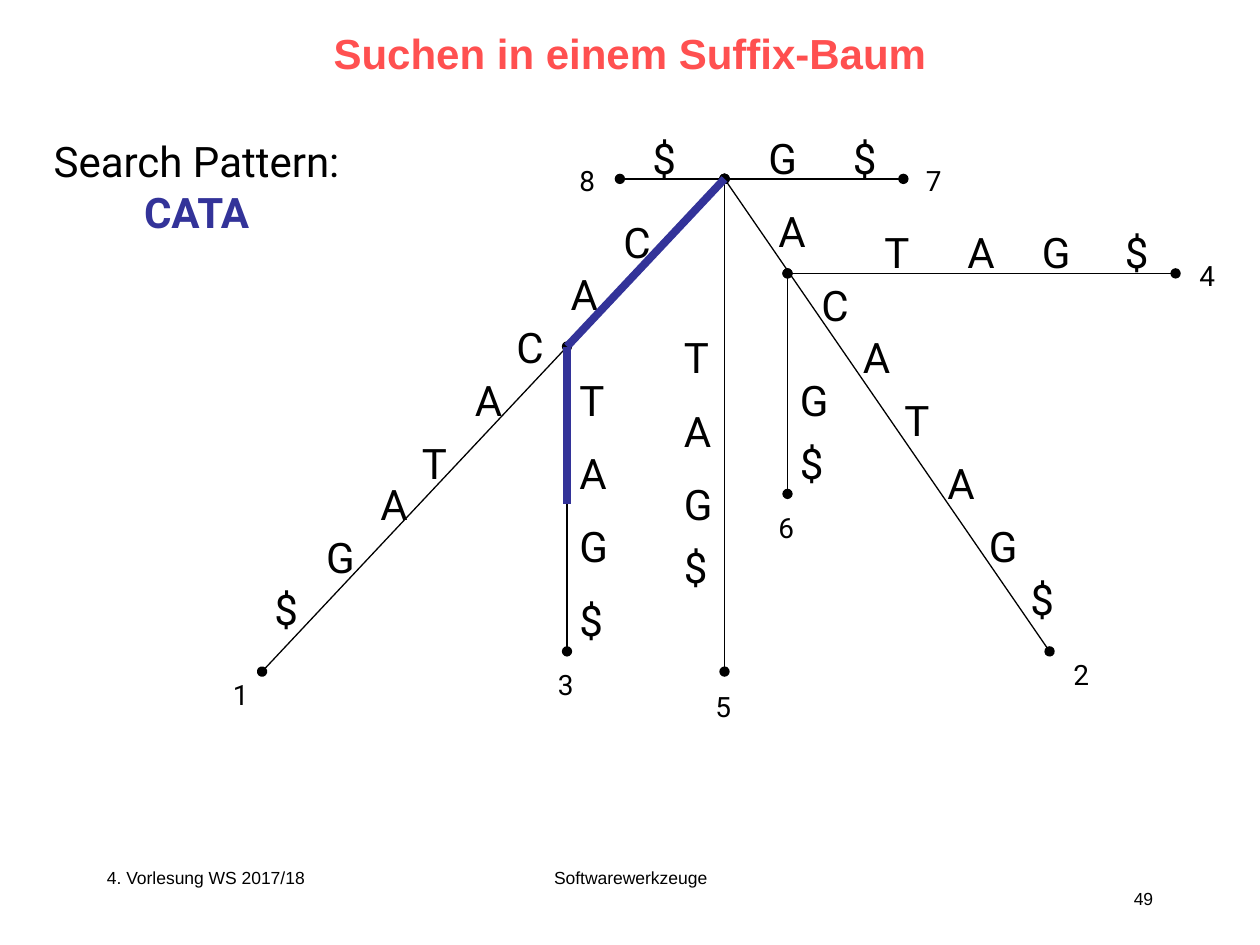
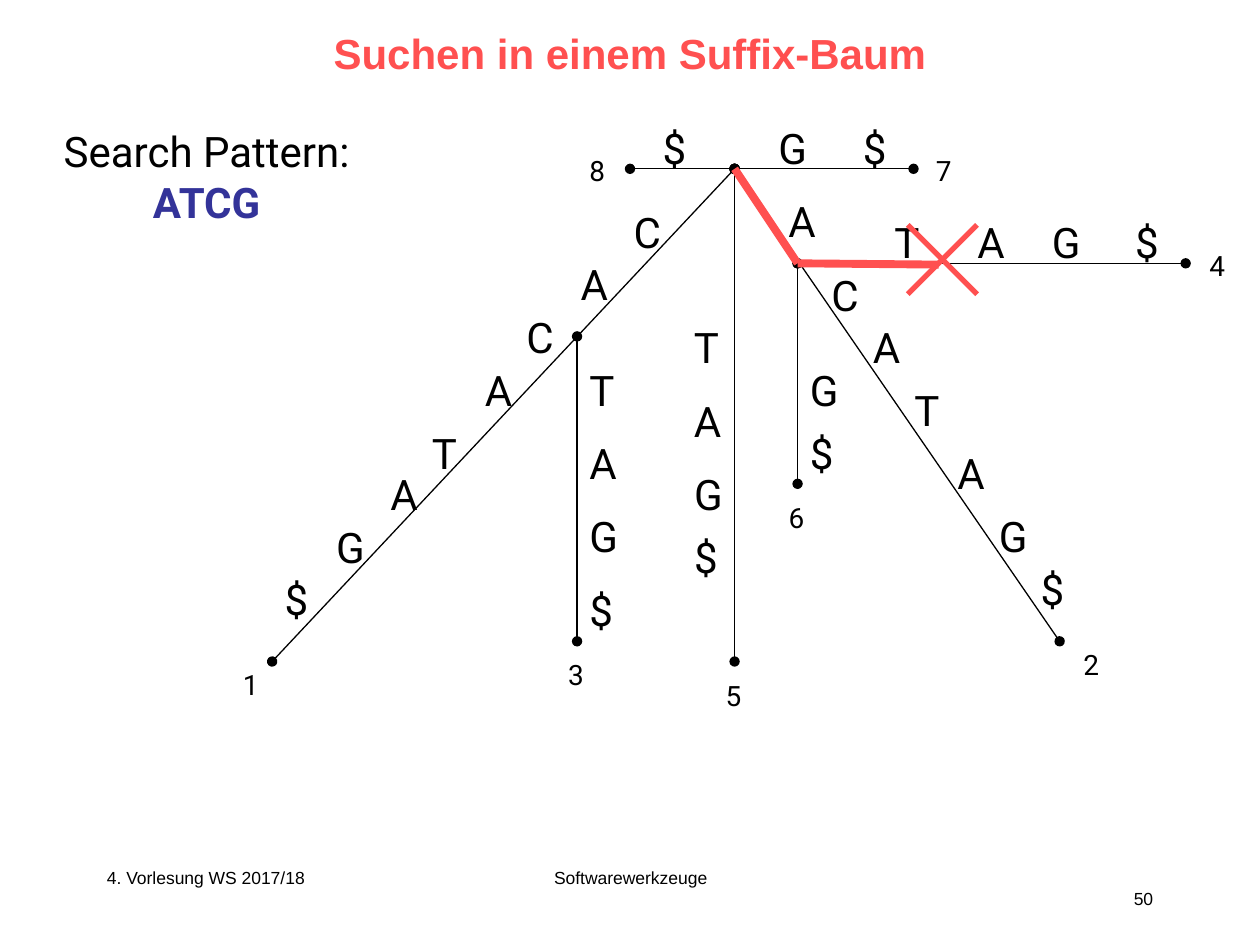
from lxml.etree import SubElement
from pptx import Presentation
from pptx.dml.color import RGBColor
from pptx.enum.shapes import MSO_CONNECTOR
from pptx.enum.text import MSO_ANCHOR, MSO_AUTO_SIZE, PP_ALIGN
from pptx.oxml.ns import qn
from pptx.util import Inches, Pt

COLORS = {"ink": "000000", "red": "FF5050", "blue": "333399"}
WIDTHS = {"G": 0.42, "$": 0.38}
NODES = {
    "root": (5.75, 1.42), "CA": (4.5, 2.75), "A": (6.25, 2.17),
    1: (2.08, 5.33), 2: (8.33, 5.17), 3: (4.5, 5.17), 4: (9.33, 2.17),
    5: (5.75, 5.33), 6: (6.25, 3.92), 7: (7.17, 1.42), 8: (4.92, 1.42),
}
EDGES = [("root", 1), ("root", 2), ("root", 5), ("CA", 3),
         ("A", 4), ("A", 6), ("root", 7), ("root", 8)]
LEAVES = {
    1: (1.75, 5.33), 2: (8.42, 5.17), 3: (4.33, 5.25), 4: (9.42, 2),
    5: (5.58, 5.42), 6: (6.08, 4), 7: (7.25, 1.25), 8: (4.5, 1.25),
}
LABELS = [
    ("CA", [4.85, 4.43], [1.67, 2.08]),
    ("CATAG$", [4, 3.67, 3.25, 2.92, 2.49, 2.08],
     [2.5, 2.92, 3.42, 3.75, 4.17, 4.58]),
    ("TAG$", [4.5] * 4, [2.92, 3.5, 4.08, 4.67]),
    ("TAG$", [5.33] * 4, [2.58, 3.17, 3.75, 4.25]),
    ("A", [6.08], [1.58]),
    ("CATAG$", [6.42, 6.75, 7.08, 7.42, 7.75, 8.08],
     [2.17, 2.58, 3.08, 3.58, 4.08, 4.5]),
    ("TAG$", [6.92, 7.58, 8.17, 8.83], [1.75] * 4),
    ("G$", [6.25] * 2, [2.92, 3.42]),
    ("G$", [6, 6.67], [1] * 2),
    ("$", [5.08], [1]),
]


class Deck:
    def __init__(self):
        self.prs = Presentation()
        self.prs.slide_width, self.prs.slide_height = Inches(10), Inches(7.5)
        self.slide = None
        self.shift = 0

    def style(self, para, size, font, color="ink", bold=False, align=PP_ALIGN.LEFT):
        para.alignment = align
        para.font.size, para.font.name, para.font.bold = Pt(size), font, bold
        para.font.color.rgb = RGBColor.from_string(COLORS[color])

    def place(self, x, y):
        return Inches(x + self.shift), Inches(y - self.shift)

    def start(self, title, number):
        self.shift = 0
        self.slide = self.prs.slides.add_slide(self.prs.slide_layouts[5])
        head = self.slide.shapes.title
        head.left, head.top = Inches(0.75), Inches(0.17)
        head.width, head.height = Inches(8.5), Inches(0.5)
        frame = head.text_frame
        frame.text = title
        frame.auto_size = MSO_AUTO_SIZE.NONE
        frame.vertical_anchor = MSO_ANCHOR.MIDDLE
        self.style(frame.paragraphs[0], 24, "Arial", "red", True, PP_ALIGN.CENTER)
        self.footer("4. Vorlesung WS 2017/18", 0.75, 6.83, 2.08, PP_ALIGN.LEFT)
        self.footer("Softwarewerkzeuge", 3.42, 6.83, 3.17, PP_ALIGN.CENTER)
        self.footer(str(number), 7.17, 7, 2.08, PP_ALIGN.RIGHT)

    def box(self, text, x, y, width, height):
        shape = self.slide.shapes.add_textbox(
            *self.place(x, y), Inches(width), Inches(height))
        shape.text_frame.text = text
        return shape.text_frame

    def footer(self, text, x, y, width, align):
        frame = self.box(text, x, y, width, 0.33)
        frame.word_wrap = True
        self.style(frame.paragraphs[0], 10, "Arial", align=align)

    def label(self, text, x, y, width, height, size):
        frame = self.box(text, x, y, width, height)
        frame.word_wrap = False
        frame.auto_size = MSO_AUTO_SIZE.SHAPE_TO_FIT_TEXT
        for para in frame.paragraphs:
            self.style(para, size, "Roboto")
        return frame

    def line(self, start, end, color="ink", width=0.75, dots=False):
        link = self.slide.shapes.add_connector(
            MSO_CONNECTOR.STRAIGHT, *self.place(*start), *self.place(*end))
        link.line.color.rgb = RGBColor.from_string(COLORS[color])
        link.line.width = Pt(width)
        props = link._element.spPr
        if dots:
            for tag in ("a:headEnd", "a:tailEnd"):
                SubElement(props.find(qn("a:ln")), qn(tag), type="oval")
        SubElement(props, qn("a:effectLst"))

    def tree(self):
        for start, end in EDGES:
            self.line(NODES[start], NODES[end], dots=True)
        for text, lefts, tops in LABELS:
            for char, x, y in zip(text, lefts, tops):
                self.label(char, x, y, WIDTHS.get(char, 0.4), 0.5, 24)
        for leaf, (x, y) in LEAVES.items():
            self.label(str(leaf), x, y, 0.32, 0.37, 16)

    def query(self, word):
        frame = self.label("Search Pattern:\n" + word, 0.32, 1.03, 2.48, 0.9, 24)
        for para, color in zip(frame.paragraphs, ("ink", "blue")):
            self.style(para, 24, "Roboto", color, color == "blue", PP_ALIGN.CENTER)

    def trail(self, points, color):
        for start, end in zip(points, points[1:]):
            self.line(start, end, color, 4.5)

    def cross(self, x, y, size, color):
        half = size / 2
        for side in (half, -half):
            self.line((x + side, y - half), (x - side, y + half), color, 3)


def main():
    deck = Deck()
    searches = [
        ("CATA", 0, ["root", "CA"], (4.5, 4), "blue"),
        ("ATCG", 0.08, ["root", "A"], (7.37, 2.18), "red"),
    ]
    for page, (word, shift, route, stop, color) in enumerate(searches, 49):
        deck.start("Suchen in einem Suffix-Baum", page)
        deck.shift = shift
        deck.tree()
        deck.query(word)
        deck.trail([NODES[name] for name in route] + [stop], color)
        if color == "red":
            deck.cross(7.4, 2.14, 0.55, color)
    deck.prs.save("out.pptx")


if __name__ == "__main__":
    main()
